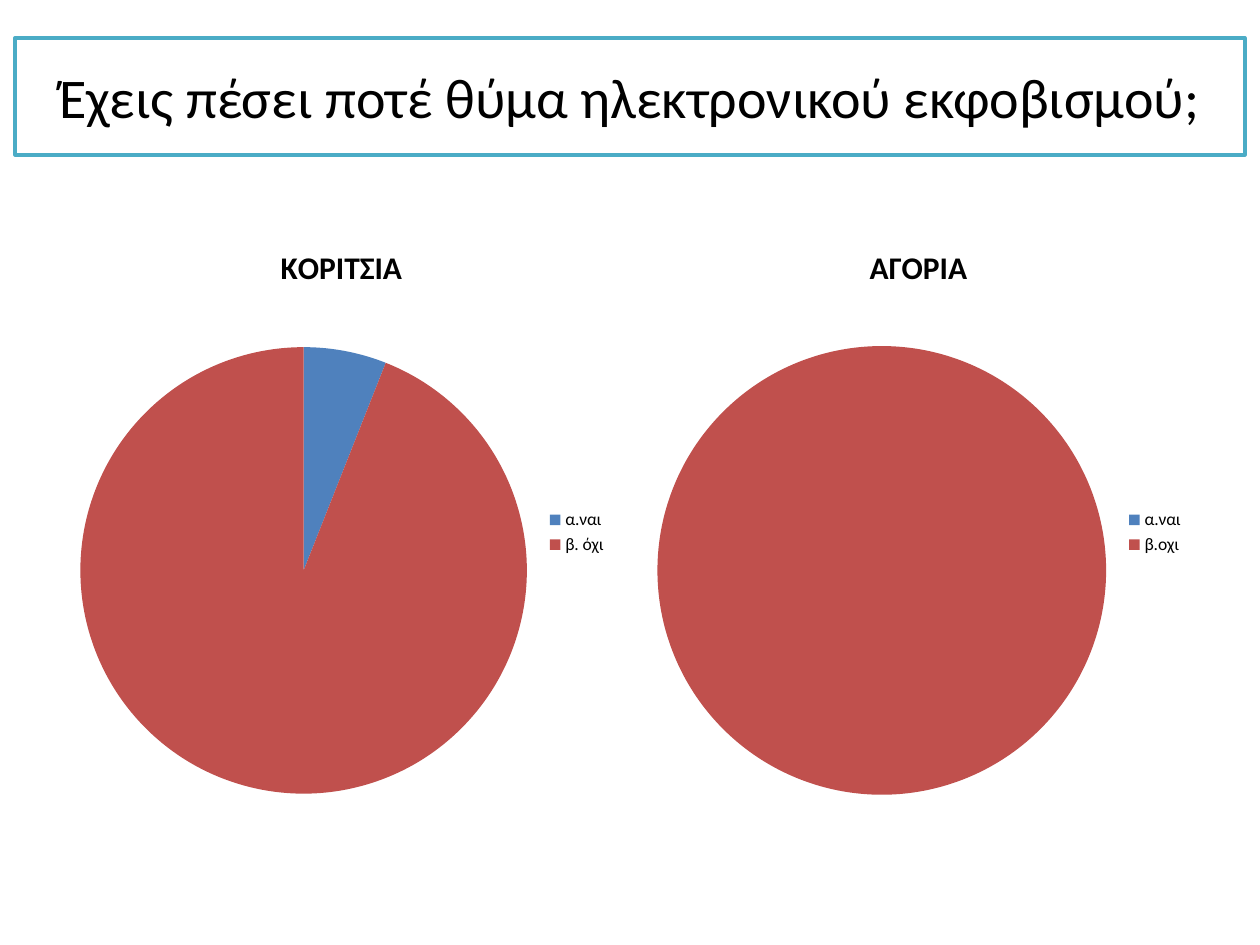
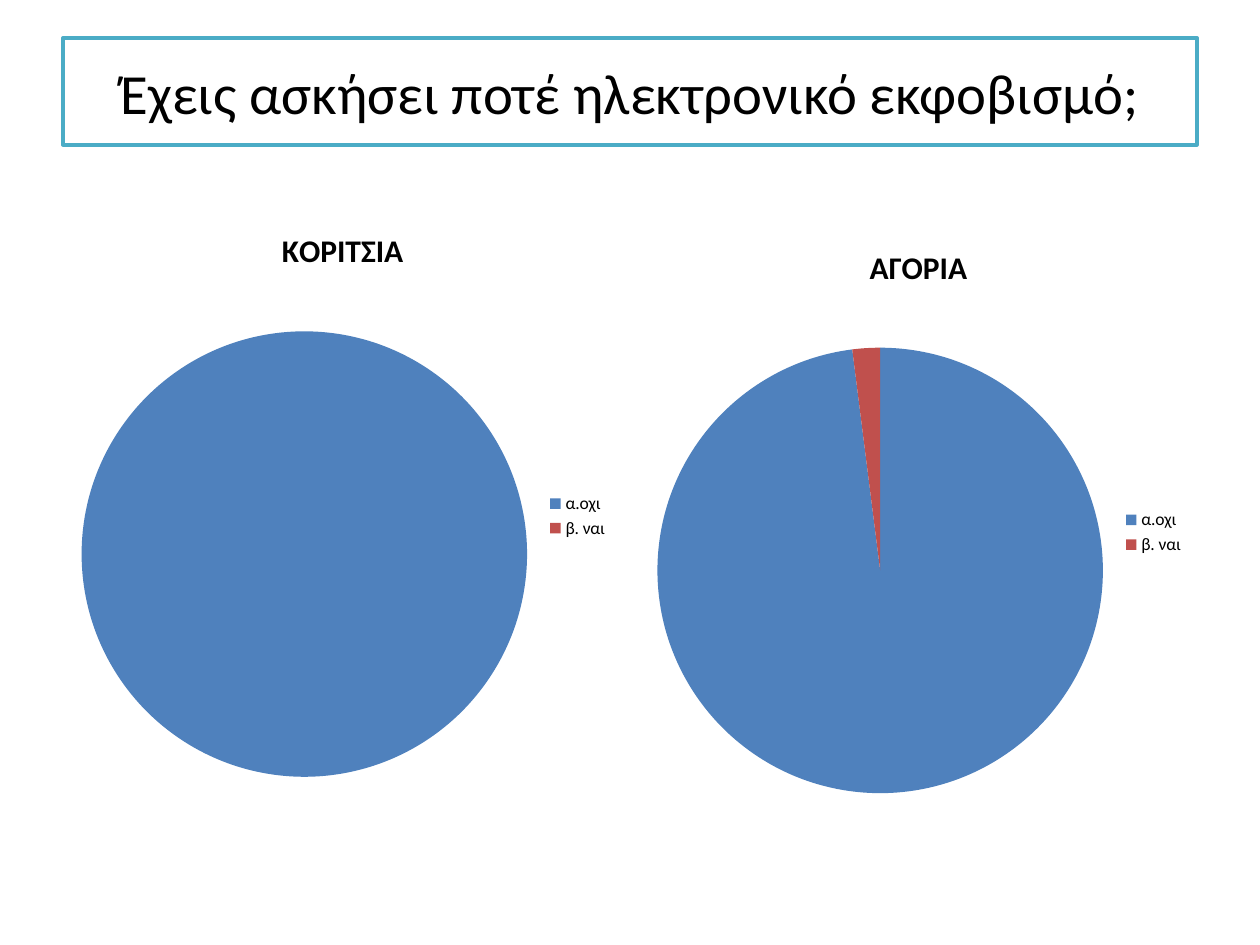
from pptx import Presentation
from pptx.chart.data import CategoryChartData
from pptx.dml.color import RGBColor
from pptx.enum import chart as ch, shapes, text
from pptx.util import Inches, Pt

FONT = "Calibri"
COLOURS = {"paper": "FFFFFF", "ink": "000000", "frame": "4BACC6",
           "first": "4F81BD", "second": "C0504D"}
SLICES = ("first", "second")
CHART_SIZE = (4.42, 4.95)

# Boxes are left, top, width, height; chart corners are left, top (inches).
QUESTIONS = [
    {"question": "Έχεις πέσει ποτέ θύμα ηλεκτρονικού εκφοβισμού;",
     "box": (0.12, 0.3, 9.76, 0.93), "size": 32,
     "groups": [
         ("ΚΟΡΙΤΣΙΑ", (0.5, 1.75), {"α.ναι": 6, "β. όχι": 94}),
         ("ΑΓΟΡΙΑ", (5.08, 1.75), {"α.ναι": 0, "β.οχι": 100}),
     ]},
    {"question": "Έχεις ασκήσει ποτέ ηλεκτρονικό εκφοβισμό;",
     "box": (0.5, 0.3, 9, 0.85), "size": 32.4,
     "groups": [
         ("ΚΟΡΙΤΣΙΑ", (0.51, 1.62), {"α.οχι": 100, "β. ναι": 0}),
         ("ΑΓΟΡΙΑ", (5.08, 1.75), {"α.οχι": 98, "β. ναι": 2}),
     ]},
]


def colour(name):
    return RGBColor.from_string(COLOURS[name])


def style_font(font, size, bold=False):
    font.name = FONT
    font.size = Pt(size)
    font.bold = bold
    font.color.rgb = colour("ink")


def add_question(slide, question, box, size):
    banner = slide.shapes.add_shape(shapes.MSO_SHAPE.RECTANGLE, *map(Inches, box))
    banner.shadow.inherit = False
    banner.fill.solid()
    banner.fill.fore_color.rgb = colour("paper")
    banner.line.color.rgb = colour("frame")
    banner.line.width = Pt(2)
    frame = banner.text_frame
    frame.word_wrap = True
    frame.vertical_anchor = text.MSO_ANCHOR.MIDDLE
    frame.text = question
    paragraph = frame.paragraphs[0]
    paragraph.alignment = text.PP_ALIGN.CENTER
    style_font(paragraph.runs[0].font, size)


def add_answers(slide, group, corner, answers):
    """Add one group's answers as a pie with its title and legend."""
    data = CategoryChartData()
    data.categories = list(answers)
    data.add_series("Series 1", list(answers.values()))
    pie = slide.shapes.add_chart(
        ch.XL_CHART_TYPE.PIE, *map(Inches, corner + CHART_SIZE), data).chart
    style_font(pie.font, 10)

    pie.has_title = True
    heading = pie.chart_title.text_frame
    heading.text = group
    style_font(heading.paragraphs[0].runs[0].font, 18, bold=True)
    pie.chart_title.include_in_layout = False

    pie.has_legend = True
    pie.legend.position = ch.XL_LEGEND_POSITION.RIGHT
    pie.legend.include_in_layout = False

    plot = pie.plots[0]
    plot.vary_by_categories = True
    for index, name in enumerate(SLICES):
        fill = plot.series[0].points[index].format.fill
        fill.solid()
        fill.fore_color.rgb = colour(name)


def main():
    deck = Presentation()
    deck.slide_width, deck.slide_height = Inches(10), Inches(7.5)
    for entry in QUESTIONS:
        slide = deck.slides.add_slide(deck.slide_layouts[6])
        add_question(slide, entry["question"], entry["box"], entry["size"])
        for group in entry["groups"]:
            add_answers(slide, *group)
    deck.save("out.pptx")


if __name__ == "__main__":
    main()
